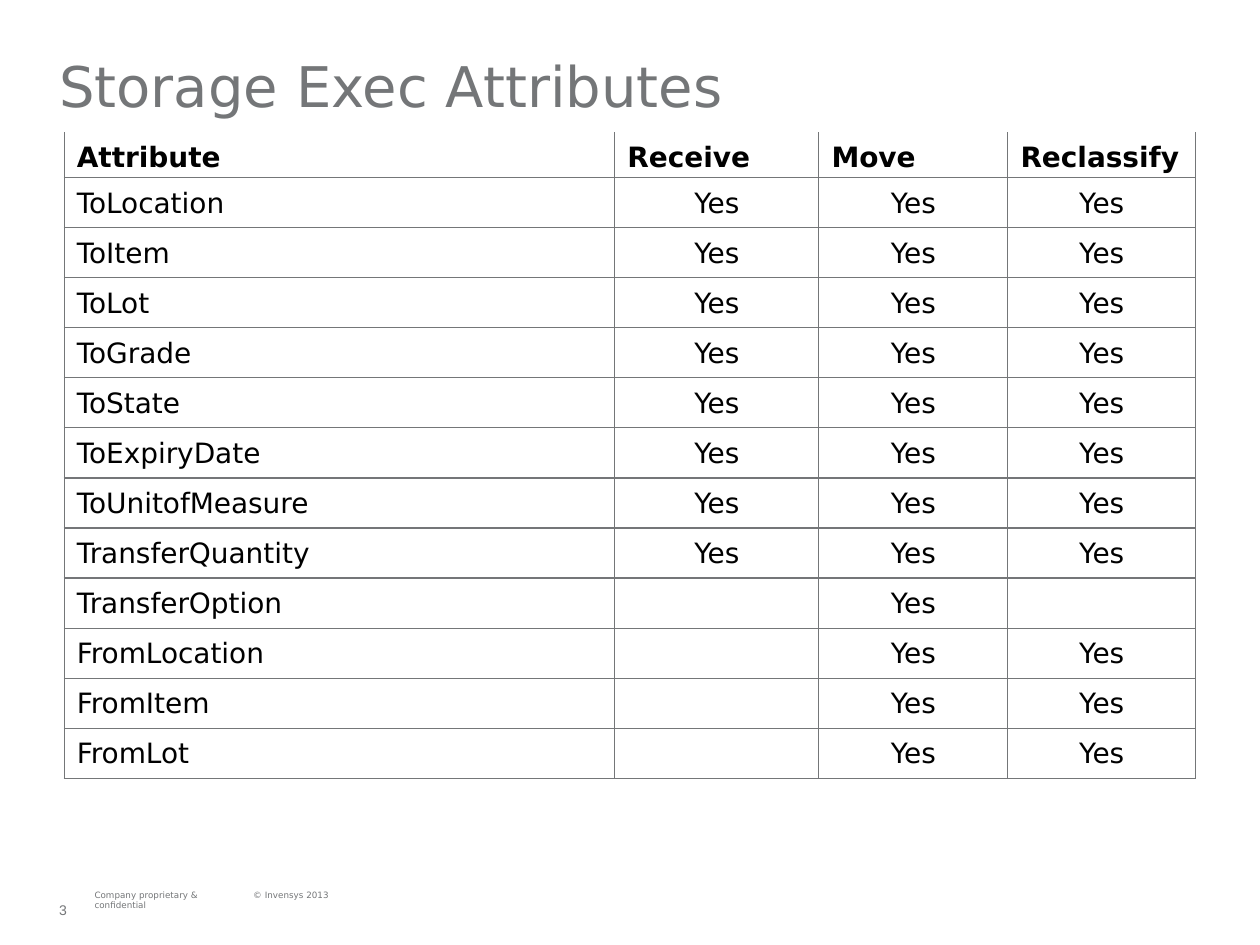
from lxml import etree
from pptx import Presentation
from pptx import util as u
from pptx.dml.color import RGBColor
from pptx.enum import text
from pptx.oxml import ns

COLORS = {"grey": "747678", "black": "000000", "white": "FFFFFF"}
FONT = "DejaVu Sans"
HEADINGS = ["Attribute", "Receive", "Move", "Reclassify"]
ALL, NOT_RECEIVE, MOVE_ONLY = ["Yes"] * 3, ["", "Yes", "Yes"], ["", "Yes", ""]
ATTRIBUTES = [
    ("ToLocation", ALL),
    ("ToItem", ALL),
    ("ToLot", ALL),
    ("ToGrade", ALL),
    ("ToState", ALL),
    ("ToExpiryDate", ALL),
    ("ToUnitofMeasure", ALL),
    ("TransferQuantity", ALL),
    ("TransferOption", MOVE_ONLY),
    ("FromLocation", NOT_RECEIVE),
    ("FromItem", NOT_RECEIVE),
    ("FromLot", NOT_RECEIVE),
]
COLUMN_WIDTHS = [4.37, 1.62, 1.5, 1.49]
HEADER_HEIGHT = 0.36


def format_font(font, size, color, name=FONT, bold=False):
    font.size = u.Pt(size)
    font.name = name
    font.bold = bold
    font.color.rgb = RGBColor.from_string(COLORS[color])


def add_label(slide, box, words, size, name=FONT, line_spacing=None,
              anchor=text.MSO_ANCHOR.TOP):
    """Add a grey text box without insets."""
    frame = slide.shapes.add_textbox(*map(u.Inches, box)).text_frame
    frame.word_wrap = True
    frame.vertical_anchor = anchor
    frame.margin_left = frame.margin_right = 0
    frame.margin_top = frame.margin_bottom = 0
    frame.text = words
    paragraph = frame.paragraphs[0]
    if line_spacing:
        paragraph.line_spacing = u.Pt(line_spacing)
    format_font(paragraph.runs[0].font, size, "grey", name)


def set_borders(cell, hidden=()):
    properties = cell._tc.get_or_add_tcPr()
    for side in ("L", "R", "T", "B"):
        line = etree.SubElement(properties, ns.qn(f"a:ln{side}"), w=str(u.Pt(0.75)))
        if side in hidden:
            etree.SubElement(line, ns.qn("a:noFill"))
        else:
            fill = etree.SubElement(line, ns.qn("a:solidFill"))
            etree.SubElement(fill, ns.qn("a:srgbClr"), val=COLORS["grey"])


def fill_cell(cell, words, is_header, is_value):
    set_borders(cell, hidden="T" if is_header else "")
    cell.margin_left = cell.margin_right = u.Inches(0.1)
    cell.margin_top = cell.margin_bottom = 0
    if is_value and words:
        cell.fill.solid()
        cell.fill.fore_color.rgb = RGBColor.from_string(COLORS["white"])
    else:
        cell.fill.background()
    if not words:
        return
    cell.text_frame.text = words
    paragraph = cell.text_frame.paragraphs[0]
    paragraph.line_spacing = u.Pt(24)
    if is_value:
        paragraph.alignment = text.PP_ALIGN.CENTER
    format_font(paragraph.runs[0].font, 16, "black", bold=is_header)


def add_attribute_table(slide, box):
    rows = [HEADINGS] + [[name, *values] for name, values in ATTRIBUTES]
    frame = slide.shapes.add_table(len(rows), len(HEADINGS), *map(u.Inches, box))
    table = frame.table
    table.first_row = table.horz_banding = False
    for column, width in zip(table.columns, COLUMN_WIDTHS):
        column.width = u.Inches(width)
    body_height = (box[3] - HEADER_HEIGHT) / len(ATTRIBUTES)
    for i, row in enumerate(rows):
        table.rows[i].height = u.Inches(body_height if i else HEADER_HEIGHT)
        for j, words in enumerate(row):
            fill_cell(table.cell(i, j), words, is_header=i == 0,
                      is_value=i > 0 and j > 0)


def add_footer(slide, box):
    left, top, _, height = box
    add_label(slide, (left, top + 0.05, 0.23, 0.23), "3", 8, name="Arial",
              anchor=text.MSO_ANCHOR.MIDDLE)
    add_label(slide, (left + 0.28, top, 1.21, height),
              "Company proprietary & confidential", 5)
    add_label(slide, (left + 1.54, top, 2.05, height), "© Invensys 2013", 5)


def main():
    presentation = Presentation()
    presentation.slide_width = u.Inches(10)
    presentation.slide_height = u.Inches(7.5)
    slide = presentation.slides.add_slide(presentation.slide_layouts[6])
    add_label(slide, (0.47, 0.46, 9.06, 0.99), "Storage Exec Attributes", 32,
              line_spacing=35)
    add_attribute_table(slide, (0.51, 1.05, sum(COLUMN_WIDTHS), 5.13))
    add_footer(slide, (0.47, 7.06, 3.59, 0.2))
    presentation.save("out.pptx")


if __name__ == "__main__":
    main()
